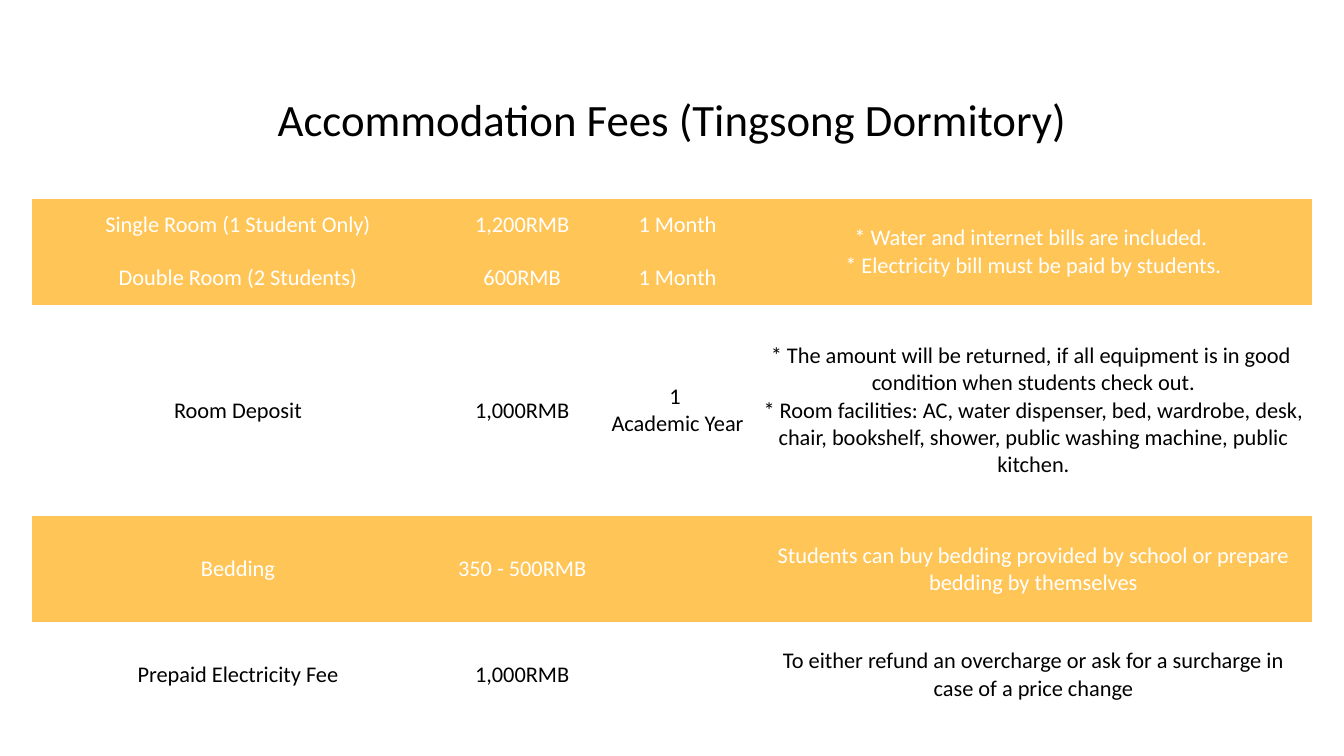
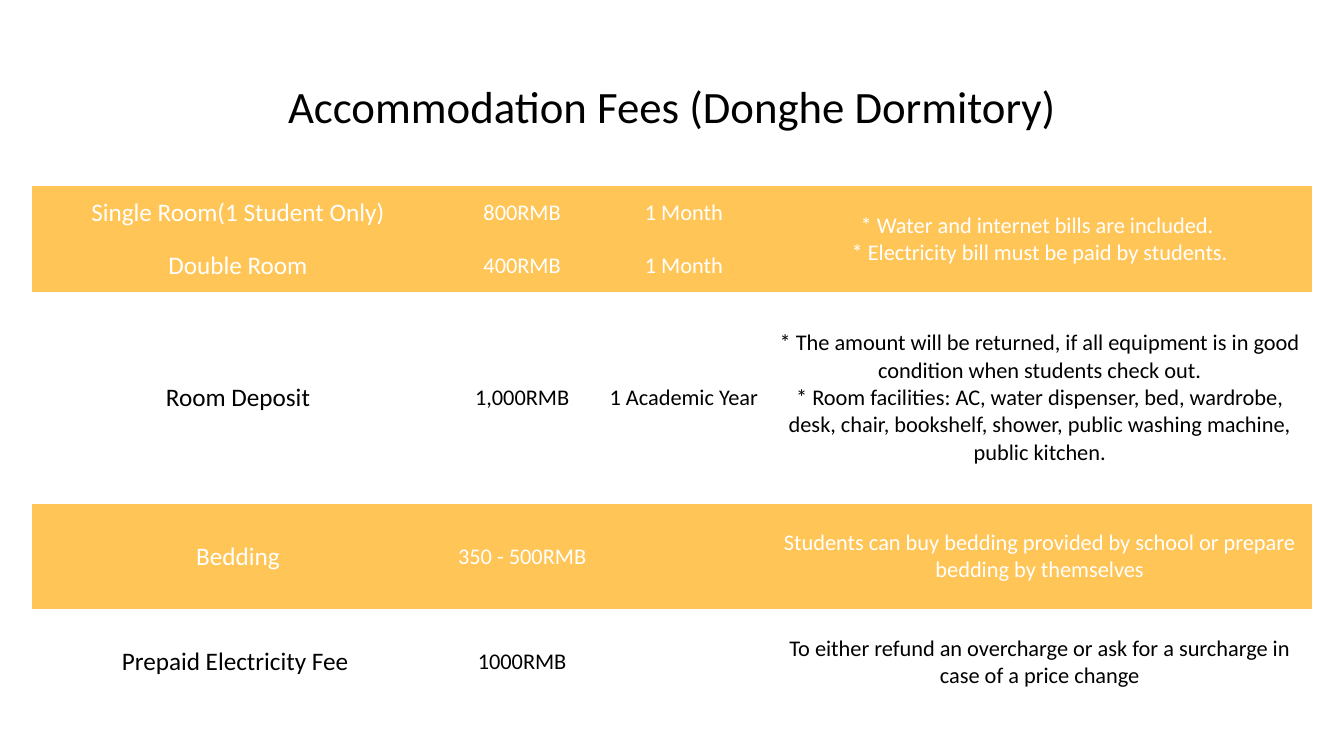
from dataclasses import dataclass

from pptx import Presentation
from pptx.dml.color import RGBColor
from pptx.enum.text import MSO_ANCHOR, PP_ALIGN
from pptx.oxml.ns import qn
from pptx.util import Pt

FONT = "Calibri"
BLACK, WHITE, AMBER = "000000", "FFFFFF", "FFC557"
NO_STYLE = "{2D5ABB26-0587-4C30-8999-92F81FD0307C}"
LEFT, WIDTH = 23, 914.4
TITLE_H, UNIT = 75, 37.8
ROW_UNITS = (1, 1, 4, 2, 2)
ROW_FILLS = (AMBER, AMBER, WHITE, AMBER, WHITE)

BILLS = "* Water and internet bills are included. \n* Electricity bill must be paid by students."
FACILITIES = (
    "* Room facilities: AC, water dispenser, bed, wardrobe, desk, chair, "
    "bookshelf, shower, public washing machine, public kitchen."
)
BEDDING = "Students can buy bedding provided by school or prepare bedding by themselves"
SURCHARGE = "To either refund an overcharge or ask for a surcharge in case of a price change"


@dataclass(frozen=True)
class FeeTable:
    """Content and measures of one dormitory's fee table."""

    title: str
    top: float
    period_w: float
    item_size: float
    rows: tuple[tuple[str, str, str, str], ...]


DORMS = (
    FeeTable("Accommodation Fees (Tingsong Dormitory)", 67, 110, 16, (
        ("Single Room (1 Student Only)", "1,200RMB", "1 Month", BILLS),
        ("Double Room (2 Students)", "600RMB", "1 Month", ""),
        ("Room Deposit", "1,000RMB", "1 \nAcademic Year",
         "* The amount will be returned, if all equipment is in good \n"
         "condition when students check out.\n" + FACILITIES),
        ("Bedding", "350 - 500RMB", "", BEDDING),
        ("Prepaid Electricity Fee", "1,000RMB", "", SURCHARGE),
    )),
    FeeTable("Accommodation Fees (Donghe Dormitory)", 58, 119, 18, (
        ("Single Room(1 Student Only)", "800RMB", "1 Month", BILLS),
        ("Double Room", "400RMB", "1 Month", ""),
        ("Room Deposit", "1,000RMB", "1 Academic Year",
         "* The amount will be returned, if all equipment is in good "
         "condition when students check out.\n" + FACILITIES),
        ("Bedding", "350 - 500RMB", "", BEDDING),
        ("Prepaid Electricity Fee ", "1000RMB", "", SURCHARGE),
    )),
)


def rgb(color: str) -> RGBColor:
    """Turn a hex string into a colour."""
    return RGBColor.from_string(color)


def fill_cell(cell, text: str, *, size: float = 16, color: str = BLACK,
              fill: str = WHITE, anchor: MSO_ANCHOR = MSO_ANCHOR.MIDDLE) -> None:
    """Write centred text into a filled table cell."""
    cell.fill.solid()
    cell.fill.fore_color.rgb = rgb(fill)
    cell.vertical_anchor = anchor
    cell.margin_left = cell.margin_right = Pt(5)
    cell.margin_top = cell.margin_bottom = Pt(0)
    cell.text = text
    for p in cell.text_frame.paragraphs:
        p.alignment = PP_ALIGN.CENTER
        for r in p.runs:
            r.font.name = FONT
            r.font.size = Pt(size)
            r.font.color.rgb = rgb(color)


def add_fee_slide(prs, dorm: FeeTable) -> None:
    """Add a slide holding one fee table."""
    s = prs.slides.add_slide(prs.slide_layouts[6])
    heights = [TITLE_H] + [UNIT * n for n in ROW_UNITS]
    widths = [294, 112, dorm.period_w]
    widths.append(WIDTH - sum(widths))
    gf = s.shapes.add_table(len(heights), len(widths), Pt(LEFT), Pt(dorm.top),
                            Pt(WIDTH), Pt(sum(heights)))
    for style in gf.element.iter(qn("a:tableStyleId")):
        style.text = NO_STYLE
    table = gf.table
    table.first_row = table.horz_banding = False
    for row, height in zip(table.rows, heights):
        row.height = Pt(height)
    for col, width in zip(table.columns, widths):
        col.width = Pt(width)

    table.cell(0, 0).merge(table.cell(0, 3))
    table.cell(1, 3).merge(table.cell(2, 3))
    fill_cell(table.cell(0, 0), dorm.title, size=32, anchor=MSO_ANCHOR.TOP)
    for i, (texts, fill) in enumerate(zip(dorm.rows, ROW_FILLS), 1):
        color = WHITE if fill == AMBER else BLACK
        for j, text in enumerate(texts):
            size = 16 if j else dorm.item_size
            fill_cell(table.cell(i, j), text, size=size, color=color, fill=fill)


def main() -> None:
    """Build and save the presentation."""
    prs = Presentation()
    prs.slide_width, prs.slide_height = Pt(960), Pt(540)
    for dorm in DORMS:
        add_fee_slide(prs, dorm)
    prs.save("out.pptx")


if __name__ == "__main__":
    main()
